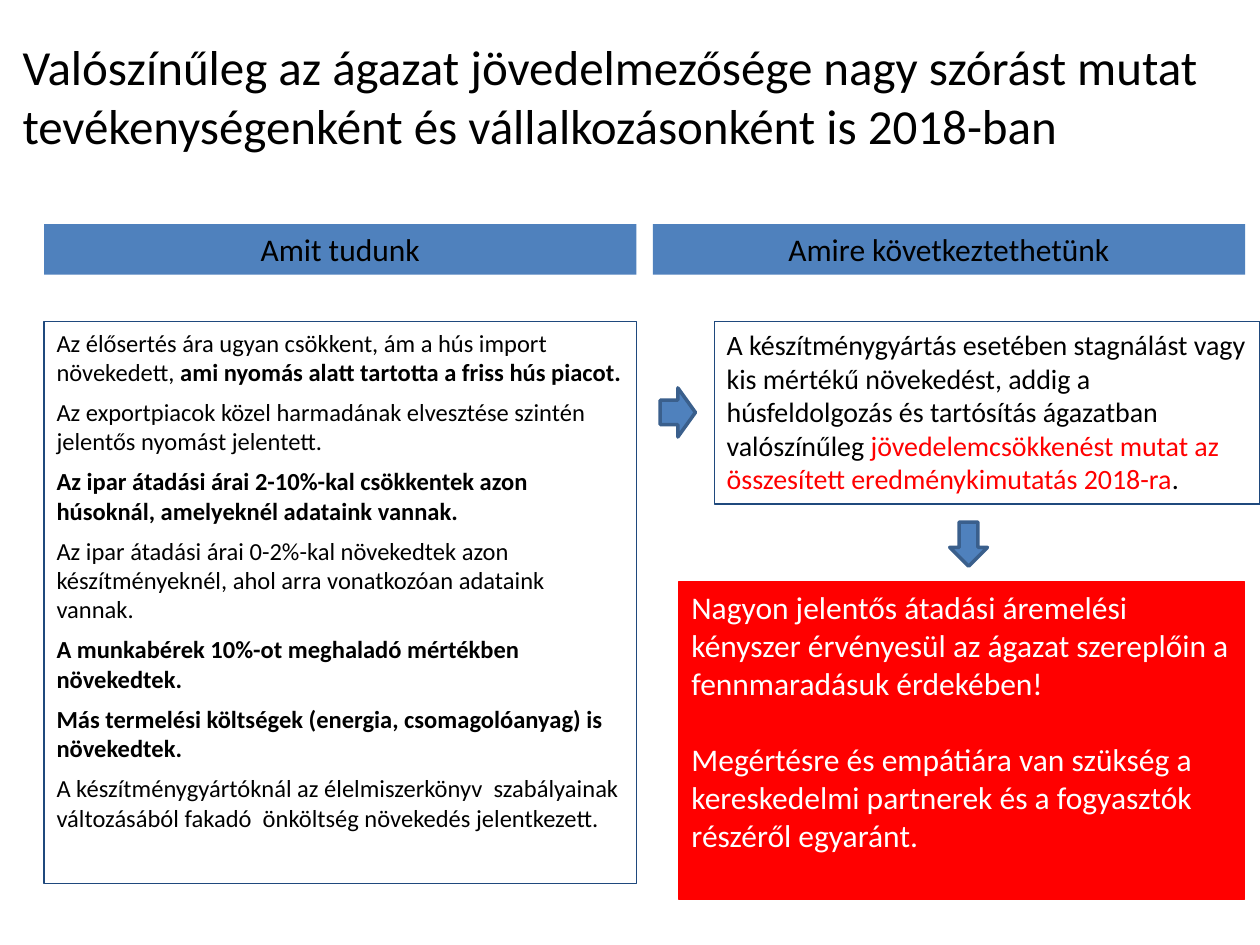
from pptx import Presentation
from pptx import util as u
from pptx.dml.color import RGBColor
from pptx.enum import shapes, text

BLACK = RGBColor(0x00, 0x00, 0x00)
WHITE = RGBColor(0xFF, 0xFF, 0xFF)
RED = RGBColor(0xFF, 0x00, 0x00)
BLUE = RGBColor(0x4F, 0x81, 0xBD)
NAVY = RGBColor(0x1F, 0x49, 0x7D)
ARROW_EDGE = RGBColor(0x3A, 0x5F, 0x8C)

LEFT, COLUMN_WIDTH, COLUMN_GAP = 0.89, 11.94, 0.33
HEADER_TOP, HEADER_HEIGHT = 4.52, 1.02
BODY_TOP = 6.48

TITLE = ("Valószínűleg az ágazat jövedelmezősége nagy szórást mutat "
         "tevékenységenként és vállalkozásonként is 2018-ban")
HEADERS = ["Amit tudunk", "Amire következtethetünk"]

# Each paragraph is a list of (wording, font overrides)
BOLD = {"bold": True}
FACTS = [
    [("Az élősertés ára ugyan csökkent, ám a hús import növekedett, ", {}),
     ("ami nyomás alatt tartotta a friss hús piacot.", BOLD)],
    [("Az exportpiacok közel harmadának elvesztése szintén jelentős "
      "nyomást jelentett.", {})],
    [("Az ipar átadási árai 2-10%-kal csökkentek azon húsoknál, "
      "amelyeknél adataink vannak.", BOLD)],
    [("Az ipar átadási árai 0-2%-kal növekedtek azon készítményeknél, "
      "ahol arra vonatkozóan adataink vannak.", {})],
    [("A munkabérek 10%-ot meghaladó mértékben növekedtek.", BOLD)],
    [("Más termelési költségek (energia, csomagolóanyag) is növekedtek.", BOLD)],
    [("A készítménygyártóknál az élelmiszerkönyv  szabályainak "
      "változásából fakadó  önköltség növekedés jelentkezett.", {})],
]
CONCLUSION = [
    [("A készítménygyártás esetében stagnálást vagy kis mértékű növekedést, "
      "addig a húsfeldolgozás és tartósítás ágazatban valószínűleg ", {}),
     ("jövedelemcsökkenést mutat az összesített eredménykimutatás 2018-ra",
      {"color": RED}),
     (".", {})],
]
APPEAL = [
    [("Nagyon jelentős átadási áremelési kényszer érvényesül az ágazat "
      "szereplőin a fennmaradásuk érdekében!", {})],
    [("Megértésre és empátiára van szükség a kereskedelmi partnerek és "
      "a fogyasztók részéről egyaránt.", {})],
]


def apply(target, values):
    for name, value in values.items():
        setattr(target, name, value)


def format_font(font, size, color=BLACK, bold=False):
    apply(font, {"name": "Calibri", "size": u.Pt(size), "bold": bold})
    font.color.rgb = color


def place(item, left, top, width, height):
    apply(item, {"left": u.Cm(left), "top": u.Cm(top),
                 "width": u.Cm(width), "height": u.Cm(height)})


def add_figure(slide, kind, box, fill=None, edge=None, edge_width=0.75):
    figure = slide.shapes.add_shape(kind, *(u.Cm(length) for length in box))
    figure.shadow.inherit = False
    if fill is None:
        figure.fill.background()
    else:
        figure.fill.solid()
        figure.fill.fore_color.rgb = fill
    if edge is None:
        figure.line.fill.background()
    else:
        figure.line.color.rgb = edge
        figure.line.width = u.Pt(edge_width)
    return figure


def add_panel(slide, box, paragraphs, size, color=BLACK, gap=0,
              align=text.PP_ALIGN.LEFT, **look):
    panel = add_figure(slide, shapes.MSO_SHAPE.RECTANGLE, box, **look)
    frame = panel.text_frame
    apply(frame, {"word_wrap": True, "auto_size": text.MSO_AUTO_SIZE.NONE,
                  "vertical_anchor": text.MSO_ANCHOR.TOP})
    for index, pieces in enumerate(paragraphs):
        paragraph = frame.add_paragraph() if index else frame.paragraphs[0]
        apply(paragraph, {"alignment": align, "space_after": u.Pt(gap)})
        for wording, overrides in pieces:
            run = paragraph.add_run()
            run.text = wording
            format_font(run.font, size, **{"color": color, **overrides})


def add_arrow(slide, box, rotation=0):
    arrow = add_figure(slide, shapes.MSO_SHAPE.RIGHT_ARROW, box,
                       fill=BLUE, edge=ARROW_EDGE, edge_width=2)
    arrow.rotation = rotation


def set_title(slide):
    title = slide.shapes.title
    place(title, 0.2, 0.33, 24.69, 3.18)
    title.text = TITLE
    apply(title.text_frame, {"word_wrap": True,
                             "auto_size": text.MSO_AUTO_SIZE.NONE,
                             "vertical_anchor": text.MSO_ANCHOR.MIDDLE})
    paragraph = title.text_frame.paragraphs[0]
    paragraph.alignment = text.PP_ALIGN.LEFT
    format_font(paragraph.runs[0].font, 28)


def main():
    deck = Presentation()
    apply(deck, {"slide_width": u.Cm(25.4), "slide_height": u.Cm(19.05)})
    slide = deck.slides.add_slide(deck.slide_layouts[5])
    set_title(slide)

    # Column headers
    for column, header in enumerate(HEADERS):
        left = LEFT + column * (COLUMN_WIDTH + COLUMN_GAP)
        add_panel(slide, (left, HEADER_TOP, COLUMN_WIDTH, HEADER_HEIGHT),
                  [[(header, {})]], 18, align=text.PP_ALIGN.CENTER, fill=BLUE)

    # Known facts, leading to the conclusion
    add_panel(slide, (LEFT, BODY_TOP, COLUMN_WIDTH, 11.33), FACTS, 14,
              gap=6, edge=NAVY)
    add_arrow(slide, (13.31, 7.82, 0.71, 0.99))
    add_panel(slide, (14.4, BODY_TOP, 11, 3.68), CONCLUSION, 16, edge=NAVY)

    # Closing appeal, one line apart between its paragraphs
    add_arrow(slide, (19.08, 10.59, 0.89, 0.76), rotation=90)
    add_panel(slide, (13.69, 11.73, 11.4, 6.4), APPEAL, 18, color=WHITE,
              gap=22, fill=RED, edge=RED)

    deck.save("out.pptx")


if __name__ == "__main__":
    main()
